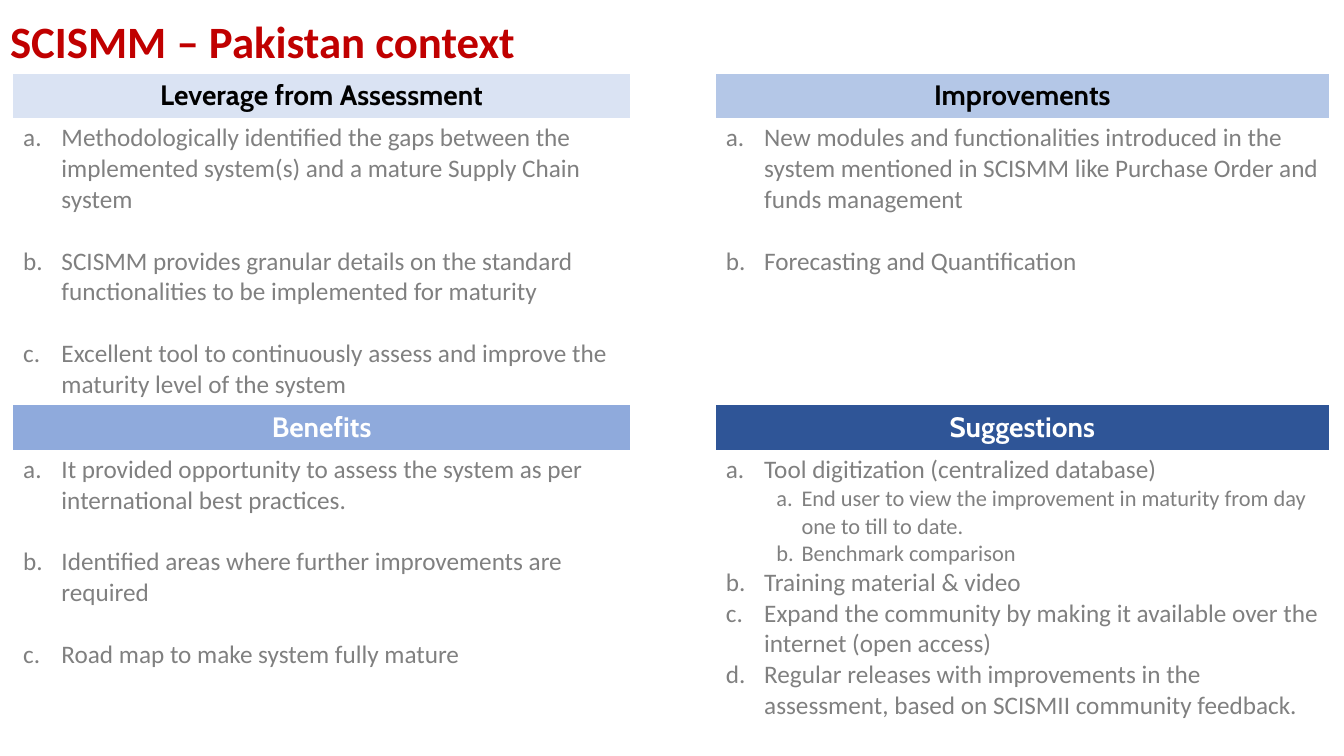
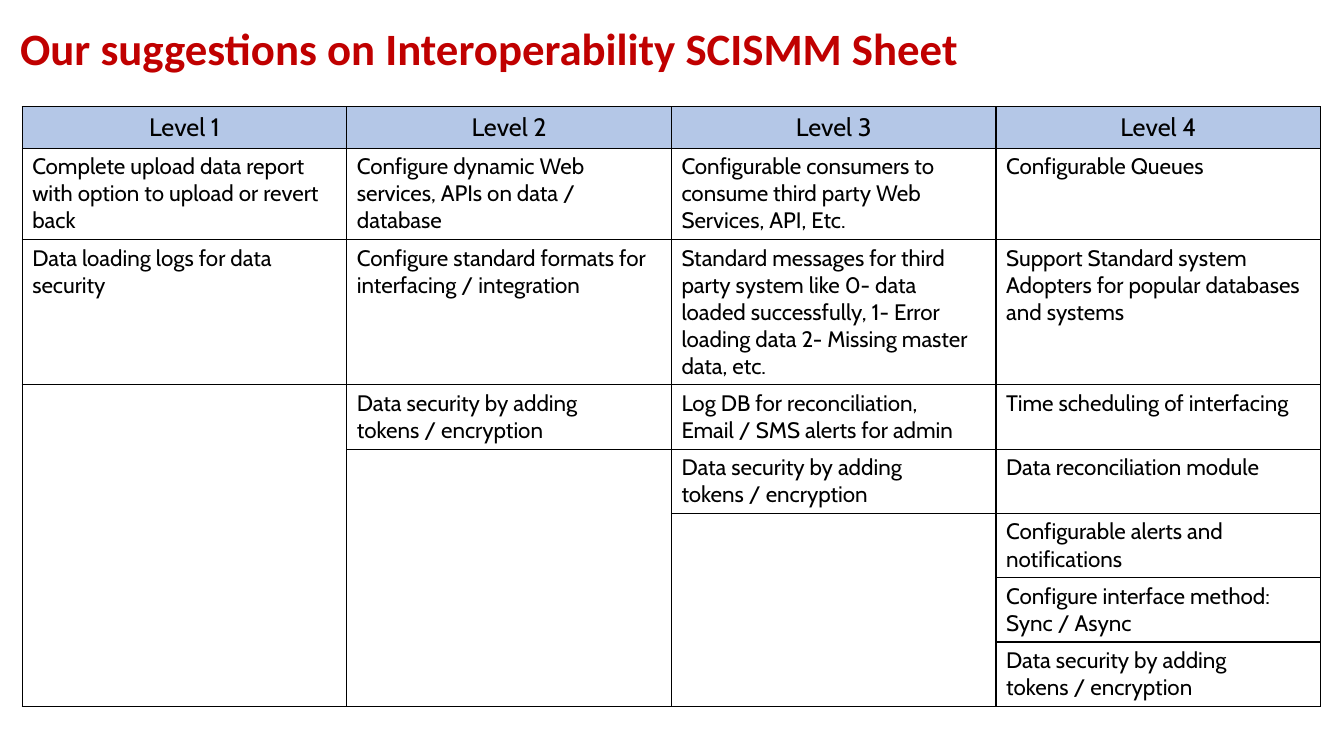
from lxml.etree import SubElement
from pptx import Presentation
from pptx.dml.color import RGBColor
from pptx.enum.text import MSO_ANCHOR, MSO_AUTO_SIZE, PP_ALIGN
from pptx.oxml import parse_xml
from pptx.oxml.ns import nsdecls, qn
from pptx.util import Inches, Pt

SLIDE_WIDTH, SLIDE_HEIGHT = 13.33, 7.5
TITLE_ONLY_LAYOUT = 5
PLAIN_TABLE_STYLE = "{2D5ABB26-0587-4C30-8999-92F81FD0307C}"

TITLE_FONT = "Calibri"
LIST_FONT = "Calibri"
TABLE_FONT = "Cabin"

RED = RGBColor(0xC0, 0x00, 0x00)
BLACK = RGBColor(0x00, 0x00, 0x00)
WHITE = RGBColor(0xFF, 0xFF, 0xFF)
GRAY = RGBColor(0x80, 0x80, 0x80)
PALE_BLUE = RGBColor(0xDA, 0xE3, 0xF3)
LIGHT_BLUE = RGBColor(0xB4, 0xC7, 0xE7)
MID_BLUE = RGBColor(0x8F, 0xAA, 0xDC)
DARK_BLUE = RGBColor(0x2F, 0x55, 0x97)

LIST_SIZES = (18, 16)
LIST_INDENTS = ((0.38, 0.38), (0.75, 0.25))
LIST_GAP = 22

# Each quadrant: heading, fill, heading colour, gap between items, (level, text) items
QUADRANTS = [
    [
        ("Leverage from Assessment", PALE_BLUE, BLACK, LIST_GAP, [
            (0, "Methodologically identified the gaps between the implemented system(s) "
                "and a mature Supply Chain system"),
            (0, "SCISMM provides granular details on the standard functionalities "
                "to be implemented for maturity"),
            (0, "Excellent tool to continuously assess and improve the maturity level "
                "of the system"),
        ]),
        ("Improvements", LIGHT_BLUE, BLACK, LIST_GAP, [
            (0, "New modules and functionalities introduced in the system mentioned "
                "in SCISMM like Purchase Order and funds management"),
            (0, "Forecasting and Quantification"),
        ]),
    ],
    [
        ("Benefits", MID_BLUE, WHITE, LIST_GAP, [
            (0, "It provided opportunity to assess the system as per international "
                "best practices."),
            (0, "Identified areas where further improvements are required"),
            (0, "Road map to make system fully mature"),
        ]),
        ("Suggestions", DARK_BLUE, WHITE, 0, [
            (0, "Tool digitization (centralized database)"),
            (1, "End user to view the improvement in maturity from day one to till to date."),
            (1, "Benchmark comparison"),
            (0, "Training material & video"),
            (0, "Expand the community by making it available over the internet (open access)"),
            (0, "Regular releases with improvements in the assessment, based on SCISMII "
                "community feedback."),
        ]),
    ],
]

SECURITY = "Data security by adding tokens / encryption"
LEVELS = {
    "Level 1": [
        "Complete upload data report with option to upload or revert back",
        "Data loading logs for data security",
    ],
    "Level 2": [
        "Configure dynamic Web services, APIs on data / database",
        "Configure standard formats for interfacing / integration",
        SECURITY,
    ],
    "Level 3": [
        "Configurable consumers to consume third party Web Services, API, Etc.",
        "Standard messages for third party system like 0- data loaded successfully, "
        "1- Error loading data 2- Missing master data, etc.",
        "Log DB for reconciliation, Email / SMS alerts for admin",
        SECURITY,
    ],
    "Level 4": [
        "Configurable Queues",
        "Support Standard system Adopters for popular databases and systems",
        "Time scheduling of interfacing",
        "Data reconciliation module",
        "Configurable alerts and notifications",
        "Configure interface method: Sync / Async",
        SECURITY,
    ],
}


def add_run(paragraph, text, font_name, size, color, bold=False):
    run = paragraph.add_run()
    run.text = text
    run.font.name = font_name
    run.font.size = Pt(size)
    run.font.color.rgb = color
    run.font.bold = bold


def add_titled_slide(presentation, title, left, top, width):
    slide = presentation.slides.add_slide(presentation.slide_layouts[TITLE_ONLY_LAYOUT])
    shape = slide.shapes.title
    shape.left, shape.top = Inches(left), Inches(top)
    shape.width, shape.height = Inches(width), Inches(0.64)
    frame = shape.text_frame
    frame.auto_size = MSO_AUTO_SIZE.NONE
    frame.vertical_anchor = MSO_ANCHOR.TOP
    frame.word_wrap = True
    paragraph = frame.paragraphs[0]
    paragraph.alignment = PP_ALIGN.LEFT
    add_run(paragraph, title, TITLE_FONT, 32, RED, bold=True)
    return slide


def add_plain_table(slide, left, top, column_widths, row_heights):
    table = slide.shapes.add_table(
        len(row_heights), len(column_widths), Inches(left), Inches(top),
        Inches(sum(column_widths)), Inches(sum(row_heights)),
    ).table
    table.first_row = False
    table.horz_banding = False
    table._tbl.tblPr.find(qn("a:tableStyleId")).text = PLAIN_TABLE_STYLE
    for column, width in zip(table.columns, column_widths):
        column.width = Inches(width)
    for row, height in zip(table.rows, row_heights):
        row.height = Inches(height)
    for cell in table.iter_cells():
        cell.fill.background()
    return table


def fill_heading(cell, text, fill, color, size, bold=False):
    cell.fill.solid()
    cell.fill.fore_color.rgb = fill
    paragraph = cell.text_frame.paragraphs[0]
    paragraph.alignment = PP_ALIGN.CENTER
    add_run(paragraph, text, TABLE_FONT, size, color, bold)


def fill_lettered_list(cell, items, gap):
    frame = cell.text_frame
    for index, (level, text) in enumerate(items):
        paragraph = frame.add_paragraph() if index else frame.paragraphs[0]
        paragraph.level = level
        paragraph.space_before = Pt(gap if index else 0)
        margin, hanging = LIST_INDENTS[level]
        properties = paragraph._p.get_or_add_pPr()
        properties.set("marL", str(Inches(margin)))
        properties.set("indent", str(-Inches(hanging)))
        SubElement(properties, qn("a:buAutoNum"), type="alphaLcPeriod")
        add_run(paragraph, text, LIST_FONT, LIST_SIZES[level], GRAY)


def add_borders(cell, color, width):
    properties = cell._tc.get_or_add_tcPr()
    for index, side in enumerate(("lnL", "lnR", "lnT", "lnB")):
        properties.insert(index, parse_xml(
            f'<a:{side} {nsdecls("a")} w="{Pt(width)}"><a:solidFill>'
            f'<a:srgbClr val="{color}"/></a:solidFill></a:{side}>'
        ))


def build_context_slide(presentation):
    slide = add_titled_slide(presentation, "SCISMM – Pakistan context", 0, 0.09, 5.34)
    table = add_plain_table(slide, 0.13, 0.73, [6.12, 0.85, 6.08], [0.44, 2.85, 0.44, 2.79])
    for band, quadrants in enumerate(QUADRANTS):
        for side, (heading, fill, color, gap, items) in enumerate(quadrants):
            row, column = 2 * band, 2 * side
            fill_heading(table.cell(row, column), heading, fill, color, 20, bold=True)
            fill_lettered_list(table.cell(row + 1, column), items, gap)


def build_levels_slide(presentation):
    slide = add_titled_slide(
        presentation, "Our suggestions on Interoperability SCISMM Sheet", 0.1, 0.16, 11.33)
    row_heights = [0.41, 0.9, 1.17] + [0.63] * 5
    table = add_plain_table(slide, 0.22, 1.06, [3.22] * len(LEVELS), row_heights)
    last_row = len(row_heights) - 1
    for cell in table.iter_cells():
        add_borders(cell, BLACK, 1)
    for column, (level, suggestions) in enumerate(LEVELS.items()):
        fill_heading(table.cell(0, column), level, LIGHT_BLUE, BLACK, 18)
        for row, suggestion in enumerate(suggestions, start=1):
            paragraph = table.cell(row, column).text_frame.paragraphs[0]
            add_run(paragraph, suggestion, TABLE_FONT, 16, BLACK)
        if len(suggestions) < last_row:
            first_empty = table.cell(len(suggestions) + 1, column)
            first_empty.merge(table.cell(last_row, column))


def main():
    presentation = Presentation()
    presentation.slide_width = Inches(SLIDE_WIDTH)
    presentation.slide_height = Inches(SLIDE_HEIGHT)
    build_context_slide(presentation)
    build_levels_slide(presentation)
    presentation.save("out.pptx")


if __name__ == "__main__":
    main()
